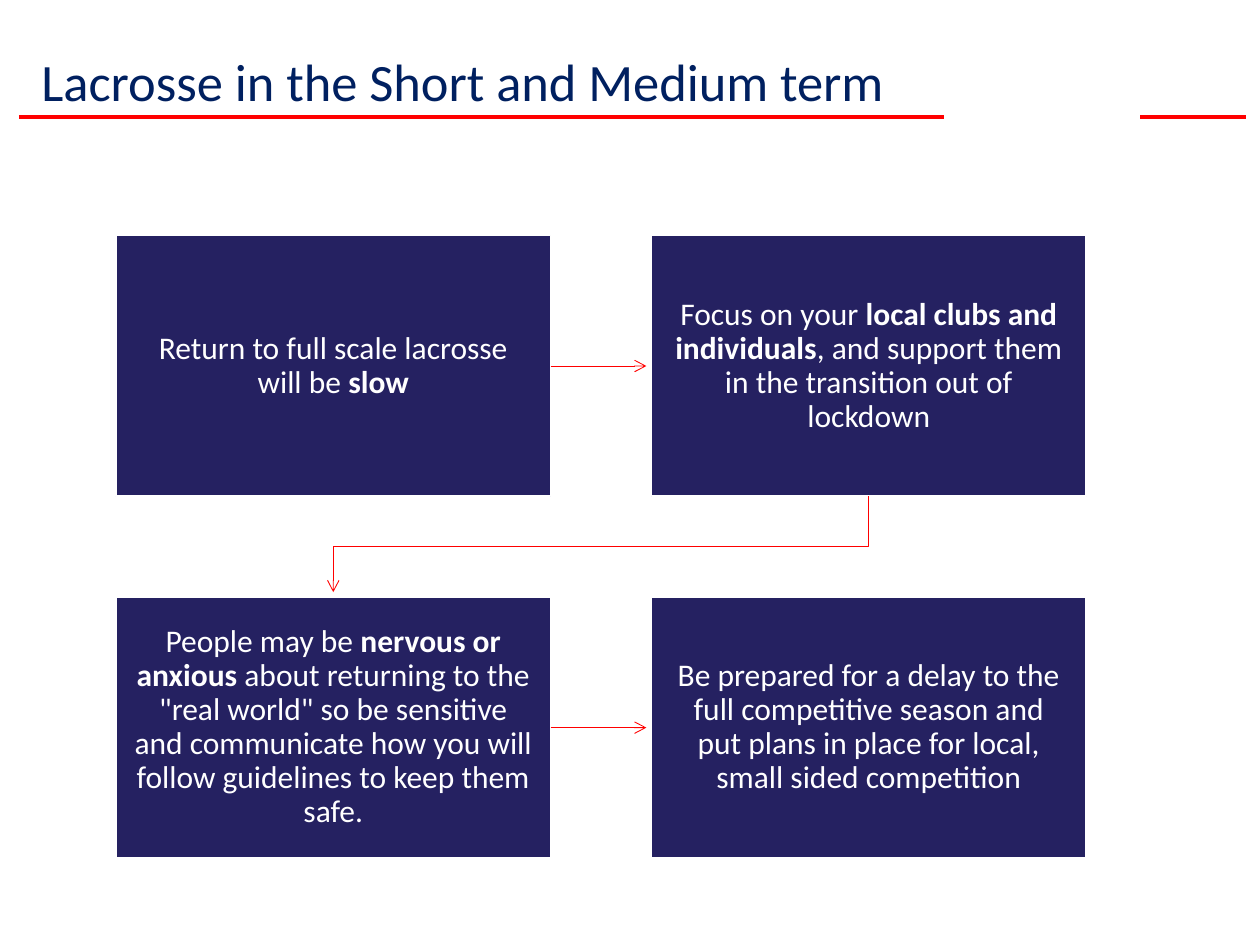
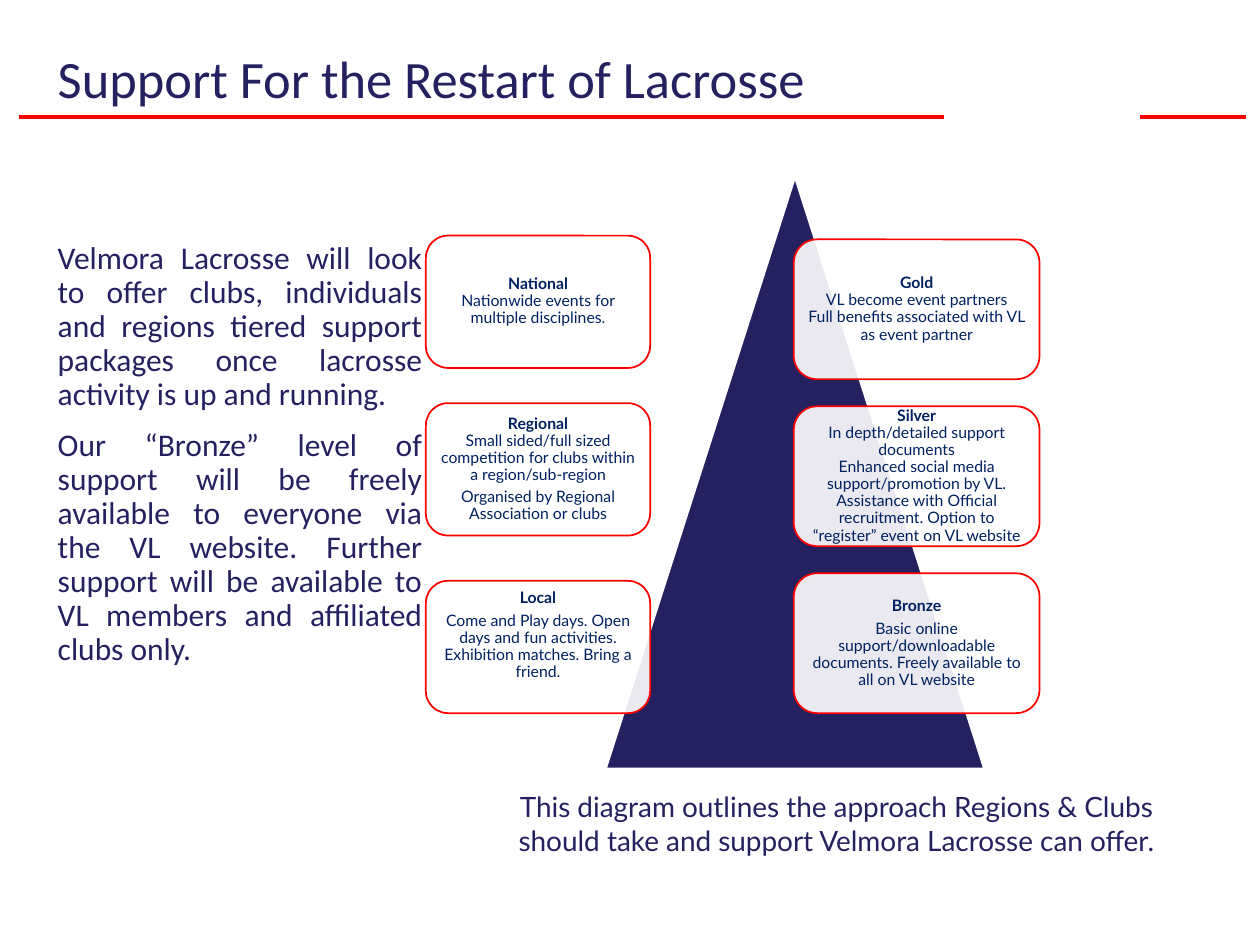
"""Build two slides on the return of lacrosse and its support tiers."""
from copy import deepcopy

from lxml.etree import SubElement
from pptx import Presentation
from pptx.dml.color import RGBColor
from pptx.enum.shapes import MSO_CONNECTOR, MSO_SHAPE
from pptx.enum.text import MSO_ANCHOR, PP_ALIGN
from pptx.oxml.ns import qn
from pptx.util import Inches, Pt

COLORS = {"navy": "252161", "ink": "002060", "red": "FF0000", "white": "FFFFFF"}


def color(name):
    return RGBColor.from_string(COLORS[name])


def write_text(shape, paragraphs, size=18, font="Calibri", ink="navy", align=PP_ALIGN.LEFT,
               anchor=MSO_ANCHOR.TOP, spacing=1.0, gap=0, insets=(0.1, 0.05, 0.1, 0.05)):
    frame = shape.text_frame
    frame.word_wrap = True
    frame.vertical_anchor = anchor
    frame.margin_left, frame.margin_top, frame.margin_right, frame.margin_bottom = map(Inches, insets)
    for index, text in enumerate(paragraphs):
        paragraph = frame.add_paragraph() if index else frame.paragraphs[0]
        paragraph.alignment = align
        paragraph.line_spacing = spacing
        if index:
            paragraph.space_before = Pt(gap)
        for part, words in enumerate(text.split("**")):
            for row, line in enumerate(words.split("\n")):
                if row:
                    paragraph.add_line_break()
                if line:
                    run = paragraph.add_run()
                    run.text = line
                    run.font.size = Pt(size)
                    run.font.name = font
                    run.font.bold = part % 2 == 1
                    run.font.color.rgb = color(ink)
        for line_break in paragraph._p.findall(qn("a:br")):
            line_break.append(deepcopy(paragraph.runs[0]._r.rPr))


class Deck:
    """Hold the presentation, its style and the current slide."""

    def __init__(self):
        self.presentation = Presentation()
        self.presentation.slide_width = Inches(10)
        self.presentation.slide_height = Inches(7.5)
        self.slide = None

    def new_slide(self, title, left, top, ink, spacing):
        self.slide = self.presentation.slides.add_slide(self.presentation.slide_layouts[6])
        for start, end in ((0.15, 7.49), (9.05, 9.89)):
            self.line(start, 0.93, end, 0.93, 2)
        self.text([title], left, top, 7.32, 0.6, size=30, ink=ink, spacing=spacing)

    def text(self, paragraphs, left, top, width, height, **style):
        box = self.slide.shapes.add_textbox(*map(Inches, (left, top, width, height)))
        write_text(box, paragraphs, **style)

    def shape(self, kind, left, top, width, height, fill="navy", outline="white", opacity=100):
        shape = self.slide.shapes.add_shape(kind, *map(Inches, (left, top, width, height)))
        shape.shadow.inherit = False
        shape.fill.solid()
        shape.fill.fore_color.rgb = color(fill)
        if opacity < 100:
            fill_color = shape.fill._xPr.find(qn("a:solidFill"))[0]
            SubElement(fill_color, qn("a:alpha"), val=str(opacity * 1000))
        shape.line.color.rgb = color(outline)
        shape.line.width = Pt(1)
        return shape

    def line(self, x1, y1, x2, y2, width):
        line = self.slide.shapes.add_connector(MSO_CONNECTOR.STRAIGHT, *map(Inches, (x1, y1, x2, y2)))
        self.style_line(line, width)
        SubElement(line._element.spPr, qn("a:effectLst"))
        return line

    def style_line(self, shape, width, arrow=False):
        shape.line.color.rgb = color("red")
        shape.line.width = Pt(width)
        if arrow:
            SubElement(shape.line._get_or_add_ln(), qn("a:tailEnd"), type="arrow")

    def arrow_from(self, box, x1, y, x2):
        arrow = self.line(x1, y, x2, y, 0.5)
        arrow.begin_connect(box, 3)
        self.style_line(arrow, 0.5, arrow=True)

    def bent_arrow(self, points):
        corners = [tuple(map(Inches, point)) for point in points]
        builder = self.slide.shapes.build_freeform(*corners[0])
        builder.add_line_segments(corners[1:], close=False)
        arrow = builder.convert_to_shape()
        arrow.shadow.inherit = False
        arrow.fill.background()
        self.style_line(arrow, 0.5, arrow=True)

    def step(self, text, left, top, width, height):
        box = self.shape(MSO_SHAPE.RECTANGLE, left, top, width, height)
        write_text(box, [text], ink="white", align=PP_ALIGN.CENTER, anchor=MSO_ANCHOR.MIDDLE,
                   spacing=0.9, insets=(0.14,) * 4)
        return box

    def card(self, paragraphs, left, top, width, height, bottom=0.04):
        card = self.shape(MSO_SHAPE.ROUNDED_RECTANGLE, left, top, width, height, "white", "red", 90)
        write_text(card, paragraphs, size=9, font="Lato", ink="ink", align=PP_ALIGN.CENTER,
                   anchor=MSO_ANCHOR.MIDDLE, spacing=0.9, gap=3.15, insets=(0.04, 0.04, 0.04, bottom))


def add_outlook(deck):
    deck.new_slide("Lacrosse in the Short and Medium term", 0.23, 0.4, "ink", 0.9)
    columns, rows, width, height = (0.92, 5.17), (1.87, 4.74), 3.45, 2.07
    steps = (
        ("Return to full scale lacrosse will be **slow**",
         "Focus on your **local clubs and individuals**, and support them in the transition out of lockdown"),
        ("People may be **nervous or anxious** about returning to the \"real world\" so be sensitive "
         "and communicate how you will follow guidelines to keep them safe.",
         "Be prepared for a delay to the full competitive season and put plans in place for local, "
         "small sided competition"),
    )
    for top, texts in zip(rows, steps):
        first, _ = [deck.step(text, left, top, width, height) for left, text in zip(columns, texts)]
        deck.arrow_from(first, columns[0] + width, top + height / 2, columns[1] - 0.04)
    left_middle, right_middle = (left + width / 2 for left in columns)
    deck.bent_arrow([(right_middle, rows[0] + height), (right_middle, 4.34),
                     (left_middle, 4.34), (left_middle, rows[1] - 0.04)])


def add_support(deck):
    deck.new_slide("Support For the Restart of Lacrosse", 0.36, 0.32, "navy", 1.0)
    deck.text(["Velmora Lacrosse will look to offer clubs, individuals and regions tiered support "
               "packages once lacrosse activity is up and running.",
               "Our “Bronze” level of support will be freely available to everyone via the VL website. "
               "Further support will be available to VL members and affiliated clubs only."],
              0.36, 1.87, 3.09, 3.75, align=PP_ALIGN.JUSTIFY, spacing=0.9, gap=10)
    deck.shape(MSO_SHAPE.ISOSCELES_TRIANGLE, 4.81, 1.41, 3, 4.69)
    tiers = (
        ["**Gold**\nVL become event partners\nFull benefits associated with VL as event partner"],
        ["**Silver**\nIn depth/detailed support documents\nEnhanced social media support/promotion by VL. "
         "Assistance with Official recruitment. Option to “register” event on VL website"],
        ["**Bronze**", "Basic online support/downloadable documents. Freely available to all on VL website"],
    )
    for index, tier in enumerate(tiers):
        deck.card(tier, 6.3, 1.9 + 1.325 * index, 1.95, 1.11)
    levels = (
        (1.87, 0.04, ["**National**\nNationwide events for multiple disciplines."]),
        (3.2, 0.04, ["**Regional**\nSmall sided/full sized competition for clubs within a region/sub-region",
                     "Organised by Regional Association or clubs"]),
        (4.61, 0.22, ["**Local**", "Come and Play days. Open days and fun activities. "
                      "Exhibition matches. Bring a friend."]),
    )
    for top, bottom, level in levels:
        deck.card(level, 3.38, top, 1.78, 1.05, bottom)
    deck.text(["This diagram outlines the approach Regions & Clubs should take and support "
               "Velmora Lacrosse can offer."], 3.9, 6.22, 5.48, 0.64,
              size=16, font="Lato", align=PP_ALIGN.CENTER)


def main():
    deck = Deck()
    add_outlook(deck)
    add_support(deck)
    deck.presentation.save("out.pptx")


if __name__ == "__main__":
    main()
